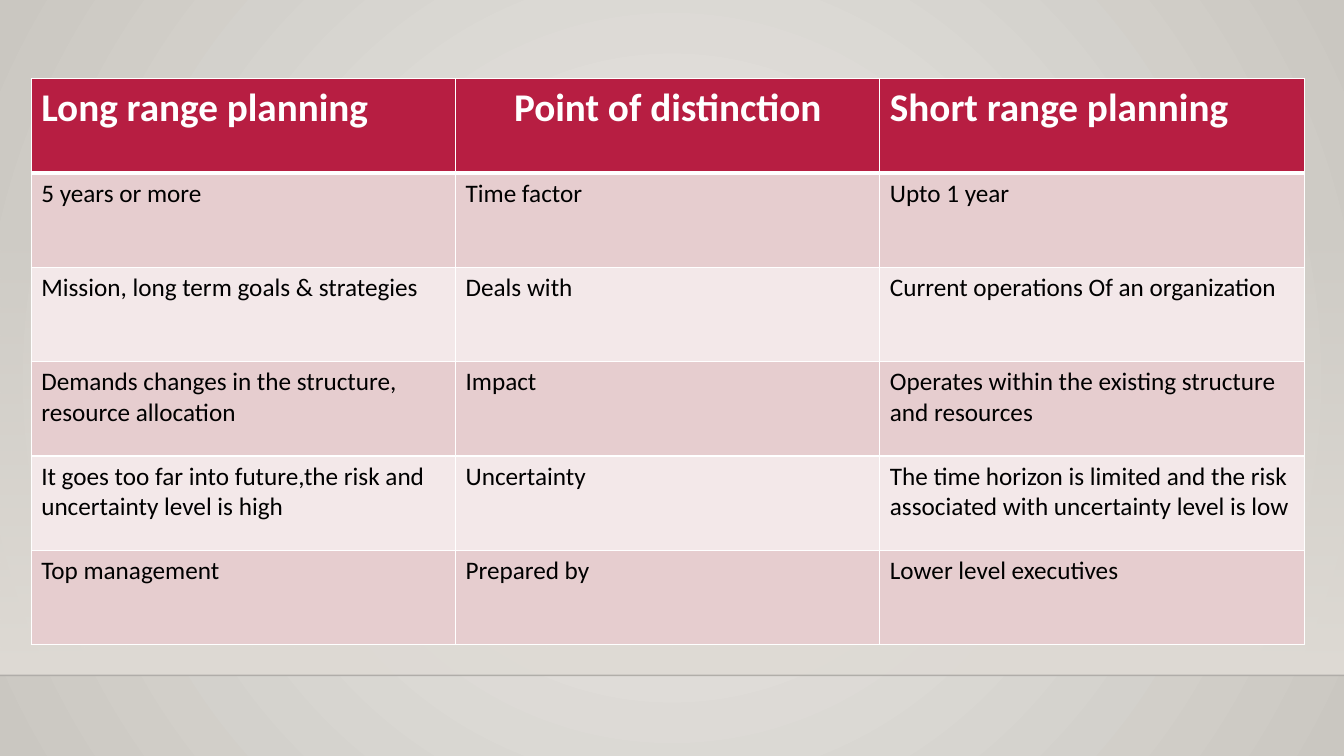
from lxml.etree import SubElement
from pptx import Presentation
from pptx.dml.color import RGBColor
from pptx.enum.shapes import MSO_CONNECTOR, MSO_SHAPE
from pptx.enum.text import PP_ALIGN
from pptx.oxml import parse_xml
from pptx.oxml.ns import nsdecls, qn
from pptx.util import Pt

# Content
ROWS = [
    ("Long range planning", "Point of distinction", "Short range planning"),
    ("5 years or more", "Time factor", "Upto 1 year"),
    ("Mission, long term goals & strategies", "Deals with",
     "Current operations Of an organization"),
    ("Demands changes in the structure, resource allocation", "Impact",
     "Operates within the existing structure and resources"),
    ("It goes too far into future,the risk and uncertainty level is high", "Uncertainty",
     "The time horizon is limited and the risk associated with uncertainty level is low"),
    ("Top management", "Prepared by", "Lower level executives"),
]

# Look and layout, in points
FONT = "Calibri"
HEADER_FILL, BANDS = "B71E42", ("E6CDCF", "F3E8E9")
PAGE_WIDTH, PAGE_HEIGHT = 960, 540
TABLE_LEFT, TABLE_TOP = 22.3, 56.2
COLUMN_WIDTH, ROW_HEIGHT = 303.1, 67.4
WALL_TOP, FLOOR_TOP = 159.1, 482.4


def color(value):
    return RGBColor.from_string(value)


def set_gradient(fill, start, end):
    fill.gradient()
    for stop, value in zip(fill.gradient_stops, (start, end)):
        stop.color.rgb = color(value)


def set_alpha(color_element, percent):
    SubElement(color_element, qn("a:alpha"), val=str(percent * 1000))


def set_borders(cell, widths):
    properties = cell._tc.get_or_add_tcPr()
    for index, (side, width) in enumerate(widths.items()):
        properties.insert(index, parse_xml(
            f'<a:ln{side} {nsdecls("a")} w="{Pt(width)}"><a:solidFill>'
            f'<a:srgbClr val="FFFFFF"/></a:solidFill></a:ln{side}>'))


def add_backdrop(page):
    # Radial background
    set_gradient(page.background.fill, "ECEAE7", "CAC7C1")
    gradient = page.element.find(".//" + qn("a:gradFill"))
    gradient.remove(gradient.find(qn("a:lin")))
    circle = SubElement(gradient, qn("a:path"), path="circle")
    SubElement(circle, qn("a:fillToRect"), l="50000", t="50000", r="50000", b="50000")

    # Wall that fades in towards the floor
    wall = page.shapes.add_shape(MSO_SHAPE.RECTANGLE, 0, Pt(WALL_TOP),
                                 Pt(PAGE_WIDTH), Pt(FLOOR_TOP - WALL_TOP))
    wall.shadow.inherit = False
    wall.line.fill.background()
    set_gradient(wall.fill, "DFDBD5", "DFDBD5")
    wall.fill.gradient_angle = 270
    set_alpha(wall.element.find(".//" + qn("a:srgbClr")), 0)

    # Floor line
    floor = page.shapes.add_connector(MSO_CONNECTOR.STRAIGHT, 0, Pt(FLOOR_TOP),
                                      Pt(PAGE_WIDTH), Pt(FLOOR_TOP))
    floor.line.color.rgb = color("000001")
    floor.line.width = Pt(1)
    set_alpha(floor.element.find(".//" + qn("a:srgbClr")), 20)
    SubElement(floor.element.spPr, qn("a:effectLst"))


def add_comparison(page):
    column_count = len(ROWS[0])
    table = page.shapes.add_table(
        len(ROWS), column_count, Pt(TABLE_LEFT), Pt(TABLE_TOP),
        Pt(COLUMN_WIDTH * column_count), Pt(ROW_HEIGHT * len(ROWS))).table
    for column in table.columns:
        column.width = Pt(COLUMN_WIDTH)
    for row_index, texts in enumerate(ROWS):
        table.rows[row_index].height = Pt(ROW_HEIGHT)
        header = row_index == 0
        for column_index, text in enumerate(texts):
            cell = table.cell(row_index, column_index)
            cell.text = text
            cell.fill.solid()
            cell.fill.fore_color.rgb = color(
                HEADER_FILL if header else BANDS[(row_index - 1) % 2])
            set_borders(cell, {"L": 1, "R": 1, "T": 3 if row_index == 1 else 1,
                               "B": 3 if header else 1})
            para = cell.text_frame.paragraphs[0]
            para.alignment = PP_ALIGN.CENTER if header and column_index == 1 else PP_ALIGN.LEFT
            para.font.name = FONT
            para.font.size = Pt(28 if header else 18)
            para.font.bold = header
            para.font.color.rgb = color("FFFFFF" if header else "000000")


def main():
    deck = Presentation()
    deck.slide_width, deck.slide_height = Pt(PAGE_WIDTH), Pt(PAGE_HEIGHT)
    page = deck.slides.add_slide(deck.slide_layouts[6])
    add_backdrop(page)
    add_comparison(page)
    deck.save("out.pptx")


if __name__ == "__main__":
    main()
